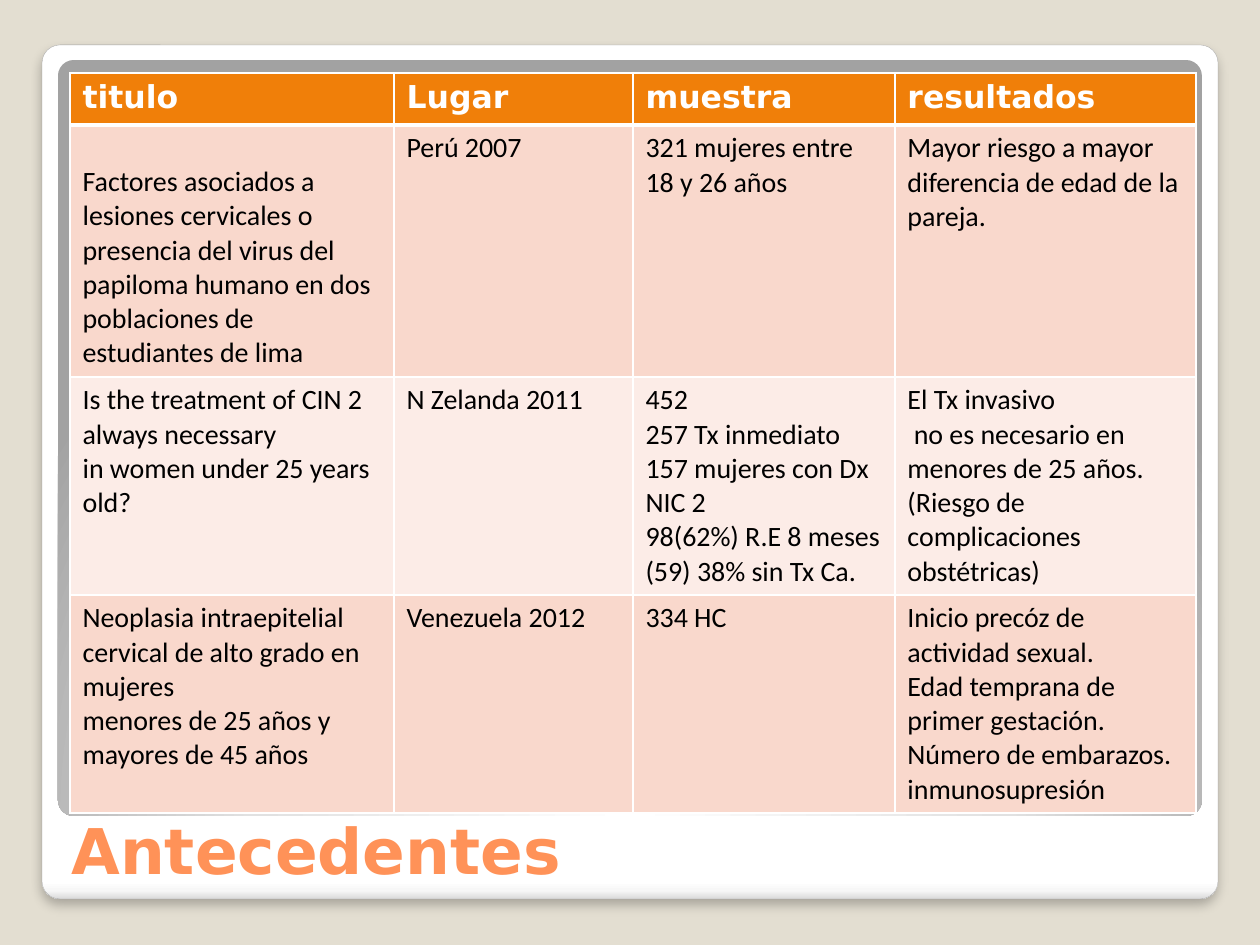
from lxml import etree
from pptx import Presentation
from pptx.dml.color import RGBColor
from pptx.enum import shapes, text
from pptx.oxml import parse_xml
from pptx.oxml.ns import qn
from pptx.util import Pt

PX = 914400 / 126
A = 'xmlns:a="http://schemas.openxmlformats.org/drawingml/2006/main"'

BACKDROP = RGBColor(0xE3, 0xDE, 0xD1)
FRAME_LINE = RGBColor(0xA4, 0xA4, 0xA4)
TITLE = RGBColor(0xFF, 0x92, 0x58)
ORANGE = RGBColor(0xF0, 0x7F, 0x09)
BANDS = [RGBColor(0xF9, 0xD8, 0xCC), RGBColor(0xFC, 0xEC, 0xE7)]
WHITE = RGBColor(0xFF, 0xFF, 0xFF)
BLACK = RGBColor(0, 0, 0)

HEADERS = ["titulo", "Lugar", "muestra", "resultados"]
STUDIES = [
    ["Factores asociados a lesiones cervicales o presencia del virus del papiloma "
     "humano en dos poblaciones de estudiantes de lima",
     "Perú 2007",
     "321 mujeres entre 18 y 26 años",
     "Mayor riesgo a mayor diferencia de edad de la pareja."],
    ["Is the treatment of CIN 2 always necessary\nin women under 25 years old?",
     "N Zelanda 2011",
     "452\n257 Tx inmediato\n157 mujeres con Dx NIC 2\n98(62%) R.E 8 meses\n"
     "(59) 38% sin Tx Ca.",
     "El Tx invasivo\n no es necesario en menores de 25 años.\n"
     "(Riesgo de complicaciones obstétricas)"],
    ["Neoplasia intraepitelial cervical de alto grado en mujeres\n"
     "menores de 25 años y mayores de 45 años",
     "Venezuela 2012",
     "334 HC",
     "Inicio precóz de actividad sexual.\nEdad temprana de primer gestación.\n"
     "Número de embarazos.\ninmunosupresión"],
]
COLUMNS = [324, 239, 262, 301]
ROWS = [52, 252, 218, 218]
FIRST_TITLE_DROP = 40  # the first study title starts one line lower

FRAME_STOPS = [(0, "FFFFFF"), (98, "FFFFFF"), (99, "F7F7F7"), (100, "DADADA")]
PANEL_STOPS = [(0, "FFFFFF"), (55, "E1E1E1"), (100, "A2A2A2")]
DOWNWARD = '<a:lin ang="5400000" scaled="0"/>'
FROM_BELOW = ('<a:path path="circle"><a:fillToRect l="50000" t="175000" '
              'r="50000" b="-75000"/></a:path>')


def px(*lengths):
    return [round(n * PX) for n in lengths]


def rounded_panel(slide, box, stops, direction):
    panel = slide.shapes.add_shape(shapes.MSO_SHAPE.ROUNDED_RECTANGLE, *px(*box))
    panel.adjustments[0] = 0.021
    panel.shadow.inherit = False
    panel.line.fill.background()
    panel.fill.solid()
    colors = "".join(f'<a:gs pos="{pos * 1000}"><a:srgbClr val="{color}"/></a:gs>'
                     for pos, color in stops)
    properties = panel.element.spPr
    properties.replace(properties.find(qn("a:solidFill")), parse_xml(
        f'<a:gradFill {A} rotWithShape="1"><a:gsLst>{colors}</a:gsLst>{direction}</a:gradFill>'))
    return panel


def style(paragraph, font_name, size, color, bold):
    font = paragraph.font
    font.name, font.size, font.bold = font_name, Pt(size), bold
    font.color.rgb = color


def set_borders(cell, bottom):
    properties = cell._tc.get_or_add_tcPr()
    widths = {"lnL": 1, "lnR": 1, "lnT": 1, "lnB": bottom}
    for place, (side, width) in enumerate(widths.items()):
        properties.insert(place, parse_xml(
            f'<a:{side} {A} w="{Pt(width)}"><a:solidFill><a:srgbClr val="{WHITE}"/>'
            f'</a:solidFill></a:{side}>'))


def main():
    prs = Presentation()
    prs.slide_width, prs.slide_height = px(1260, 945)
    slide = prs.slides.add_slide(prs.slide_layouts[6])
    slide.background.fill.solid()
    slide.background.fill.fore_color.rgb = BACKDROP

    # White frame with a soft shadow, and the grey panel inside it
    frame = rounded_panel(slide, (42, 45, 1176, 854), FRAME_STOPS, DOWNWARD)
    frame.line.color.rgb = FRAME_LINE
    frame.line.width = Pt(0.16)
    frame.element.spPr.find(qn("a:effectLst")).append(parse_xml(
        f'<a:outerShdw {A} blurRad="{Pt(6)}" dist="{Pt(4)}" dir="5400000" rotWithShape="0">'
        '<a:srgbClr val="000000"><a:alpha val="25000"/></a:srgbClr></a:outerShdw>'))
    rounded_panel(slide, (58, 60, 1144, 756), PANEL_STOPS, FROM_BELOW)

    # Title
    heading = slide.shapes.add_textbox(*px(59, 748, 1128, 145)).text_frame
    heading.word_wrap = True
    heading.vertical_anchor = text.MSO_ANCHOR.BOTTOM
    heading.text = "Antecedentes"
    style(heading.paragraphs[0], "DejaVu Sans", 36, TITLE, True)

    # Table of earlier studies
    studies = slide.shapes.add_table(
        len(ROWS), len(COLUMNS), *px(70, 73, sum(COLUMNS), sum(ROWS))).table
    for column, width in zip(studies.columns, px(*COLUMNS)):
        column.width = width
    for row, height in zip(studies.rows, px(*ROWS)):
        row.height = height
    for r, entries in enumerate([HEADERS] + STUDIES):
        is_header = r == 0
        for c, entry in enumerate(entries):
            cell = studies.cell(r, c)
            cell.text = entry
            cell.fill.solid()
            cell.fill.fore_color.rgb = ORANGE if is_header else BANDS[(r - 1) % 2]
            set_borders(cell, 3 if is_header else 1)
            for paragraph in cell.text_frame.paragraphs:
                if is_header:
                    style(paragraph, "DejaVu Sans", 18, WHITE, True)
                else:
                    style(paragraph, "Calibri", 16, BLACK, False)
    studies.cell(1, 0).margin_top = px(FIRST_TITLE_DROP)[0]

    prs.save("out.pptx")


if __name__ == "__main__":
    main()
